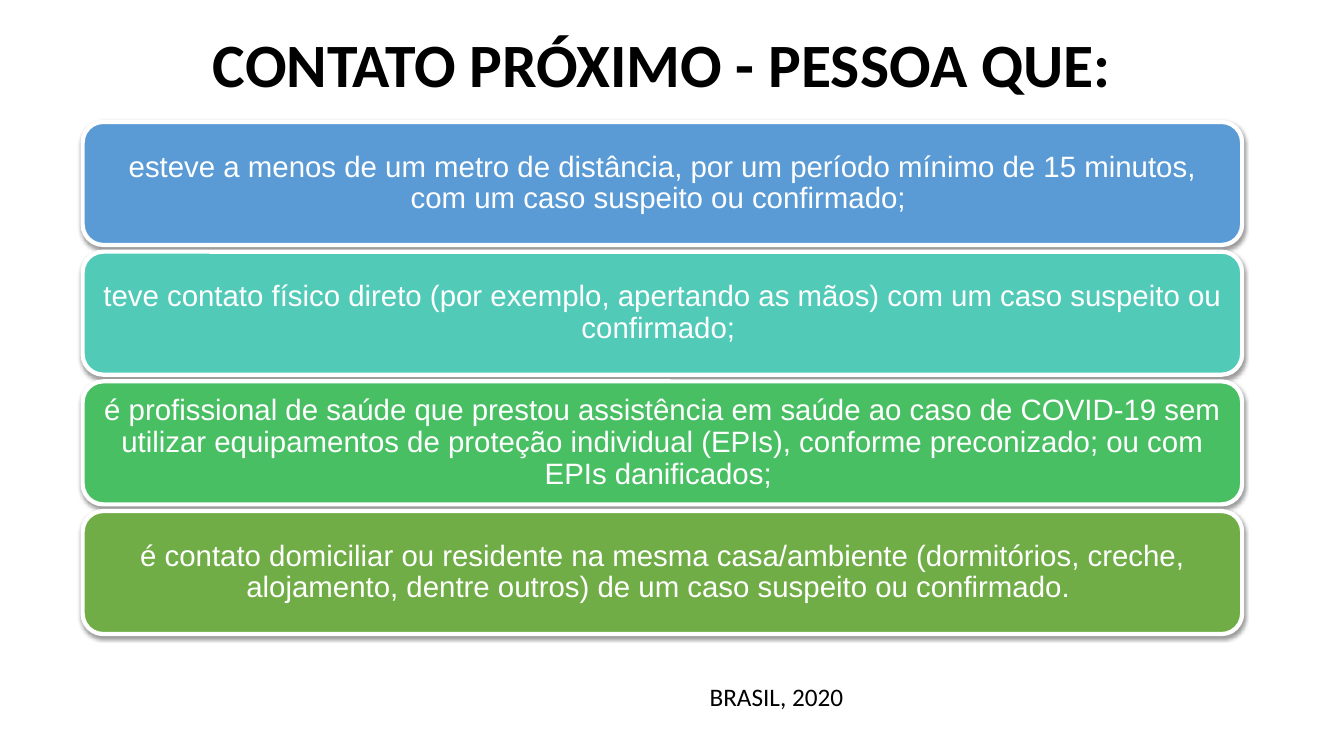
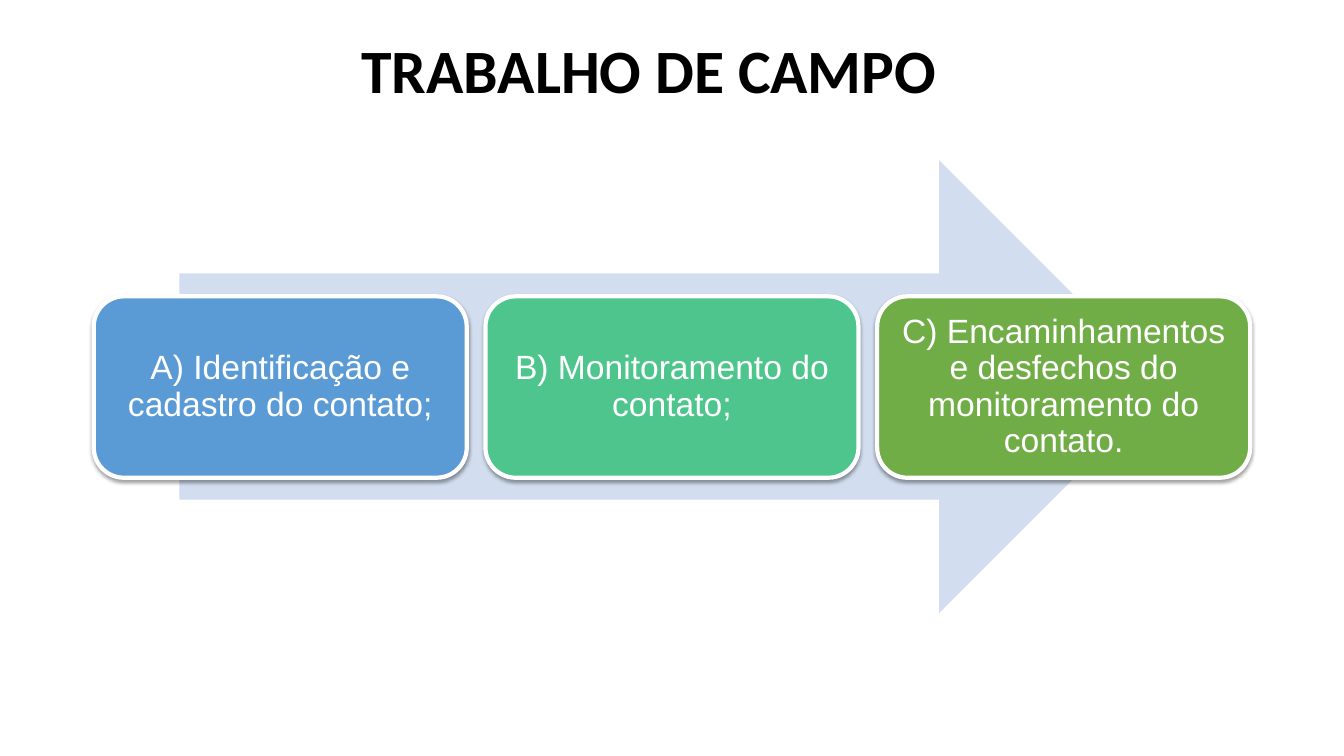
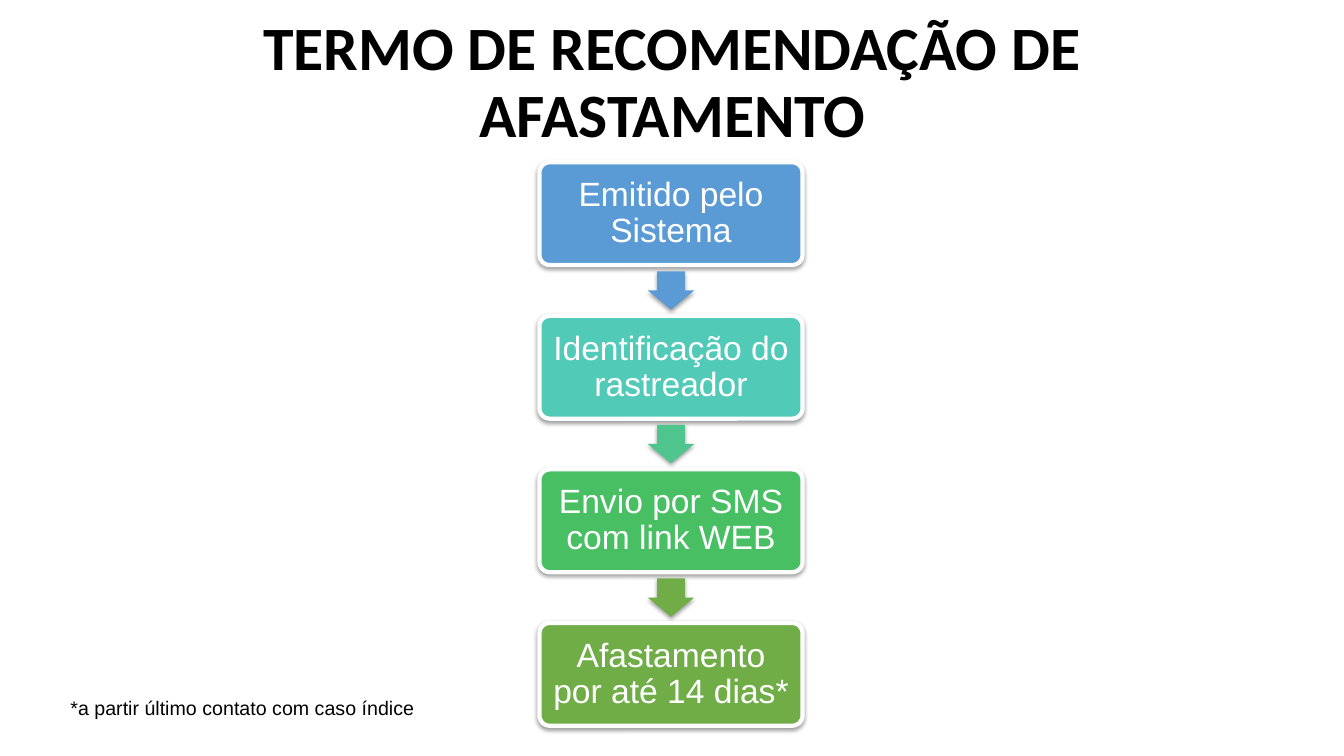
from pptx import Presentation, util as u
from pptx.dml.color import RGBColor
from pptx.enum import shapes as sh, text as tx
from pptx.oxml import parse_xml
from pptx.oxml.ns import nsdecls


class Theme:
    wide, high = 13.33, 7.5
    white, black, pale = "FFFFFF", "000000", "D2DEEF"
    blue, teal, mint = "5B9BD5", "52CAB8", "4DC58D"
    green, olive = "49BF64", "70AD47"
    head, body = "Calibri", "Arial"
    title, step, card, source, note = 44, 24, 21, 18, 14
    edge, lead = 3, 0.9


RAMP = [Theme.blue, Theme.teal, Theme.green, Theme.olive]

CONTACT = {
    "title": ("CONTATO PRÓXIMO - PESSOA QUE:", (0.82, 0.16, 11.5, 1.02)),
    "cards": [
        "esteve a menos de um metro de distância, por um período mínimo de 15 minutos, com um caso suspeito ou confirmado; ",
        "teve contato físico direto (por exemplo, apertando as mãos) com um caso suspeito ou confirmado; ",
        "é profissional de saúde que prestou assistência em saúde ao caso de COVID-19 sem utilizar equipamentos de proteção individual (EPIs), conforme preconizado; ou com EPIs danificados; ",
        "é contato domiciliar ou residente na mesma casa/ambiente (dormitórios, creche, alojamento, dentre outros) de um caso suspeito ou confirmado. ",
    ],
    "source": "BRASIL, 2020",
}
FIELD = {
    "title": ("TRABALHO DE CAMPO", (0.69, 0, 11.5, 1.45)),
    "steps": [
        ("A) Identificação e cadastro do contato;", Theme.blue),
        ("B) Monitoramento do contato;", Theme.mint),
        ("C) Encaminhamentos e desfechos do monitoramento do contato.", Theme.olive),
    ],
}
LEAVE = {
    "title": ("TERMO DE RECOMENDAÇÃO DE AFASTAMENTO", (0.92, 0.11, 11.5, 1.45)),
    "steps": [
        "Emitido pelo Sistema",
        "Identificação do rastreador",
        "Envio por SMS com link WEB",
        "Afastamento por até 14 dias*",
    ],
    "arrows": [Theme.blue, Theme.mint, Theme.olive],
    "note": "*a partir último contato com caso índice",
}


def inch(box):
    return [u.Inches(n) for n in box]


def spread(start, end, size, count):
    """Starts of equal parts that fill start to end with equal gaps."""
    pitch = (end - start - size) / (count - 1)
    return [start + i * pitch for i in range(count)]


def write(frame, words, size, font, color, bold=False, center=True, wrap=True):
    frame.word_wrap = wrap
    para = frame.paragraphs[0]
    para.alignment = tx.PP_ALIGN.CENTER if center else tx.PP_ALIGN.LEFT
    if center:
        para.line_spacing = Theme.lead
        frame.vertical_anchor = tx.MSO_ANCHOR.MIDDLE
    run = para.add_run()
    run.text = words
    run.font.size, run.font.name, run.font.bold = u.Pt(size), font, bold
    run.font.color.rgb = RGBColor.from_string(color)


def label(slide, words, box, size, font, **look):
    frame = slide.shapes.add_textbox(*inch(box)).text_frame
    write(frame, words, size, font, Theme.black, **look)


def shade(shape):
    """Give the shape a soft shadow below it."""
    shape._element.spPr.find(
        "{http://schemas.openxmlformats.org/drawingml/2006/main}effectLst"
    ).append(parse_xml(
        f'<a:outerShdw {nsdecls("a")} blurRad="39370" dist="20320" dir="5400000" '
        'algn="ctr" rotWithShape="0"><a:srgbClr val="000000">'
        '<a:alpha val="38000"/></a:srgbClr></a:outerShdw>'))


def block(slide, kind, box, color, adjust=(), soft=True):
    shape = slide.shapes.add_shape(kind, *inch(box))
    for i, value in enumerate(adjust):
        shape.adjustments[i] = value
    shape.fill.solid()
    shape.fill.fore_color.rgb = RGBColor.from_string(color)
    shape.line.fill.background()
    shape.shadow.inherit = False
    if soft:
        shade(shape)
    return shape


def card(slide, words, box, color, size, inset=0.1, adjust=()):
    shape = block(slide, sh.MSO_SHAPE.ROUNDED_RECTANGLE, box, color, adjust)
    shape.line.color.rgb = RGBColor.from_string(Theme.white)
    shape.line.width = u.Pt(Theme.edge)
    frame = shape.text_frame
    frame.margin_left = frame.margin_right = u.Inches(inset)
    frame.margin_top = frame.margin_bottom = u.Inches(inset)
    write(frame, words, size, Theme.body, Theme.white)


def start(deck, data):
    slide = deck.slides.add_slide(deck.slide_layouts[6])
    words, box = data["title"]
    label(slide, words, box, Theme.title, Theme.head, bold=True)
    return slide


def contact(deck):
    slide = start(deck, CONTACT)
    high = 1.22
    tops = spread(1.21, 6.29, high, len(CONTACT["cards"]))
    for words, top, color in zip(CONTACT["cards"], tops, RAMP):
        card(slide, words, (0.82, top, 11.5, high), color, Theme.card, 0.09)
    label(slide, CONTACT["source"], (6.94, 6.71, 3, 0.4),
          Theme.source, Theme.head, center=False)


def field(deck):
    slide = start(deck, FIELD)
    block(slide, sh.MSO_SHAPE.RIGHT_ARROW, (1.78, 1.59, 9.78, 4.49),
          Theme.pale, soft=False)
    wide = 3.7
    lefts = spread(0.93, 12.4, wide, len(FIELD["steps"]))
    for (words, color), left in zip(FIELD["steps"], lefts):
        card(slide, words, (left, 2.94, wide, 1.8), color, Theme.step)


def leave(deck):
    slide = start(deck, LEAVE)
    left, wide, high = 5.35, 2.61, 1.02
    tops = spread(1.61, 7.2, high, len(LEAVE["steps"]))
    for words, top, color in zip(LEAVE["steps"], tops, RAMP):
        card(slide, words, (left, top, wide, high), color, Theme.step, adjust=[0.1])
    across, down = 0.46, 0.38
    for top, below, color in zip(tops, tops[1:], LEAVE["arrows"]):
        mid = (top + high + below) / 2
        box = (left + (wide - across) / 2, mid - down / 2, across, down)
        block(slide, sh.MSO_SHAPE.DOWN_ARROW, box, color, [0.6, 0.5])
    label(slide, LEAVE["note"], (0.6, 6.86, 3.63, 0.34),
          Theme.note, Theme.body, center=False, wrap=False)


def main():
    deck = Presentation()
    deck.slide_width, deck.slide_height = inch((Theme.wide, Theme.high))
    for build in (contact, field, leave):
        build(deck)
    deck.save("out.pptx")


if __name__ == "__main__":
    main()
